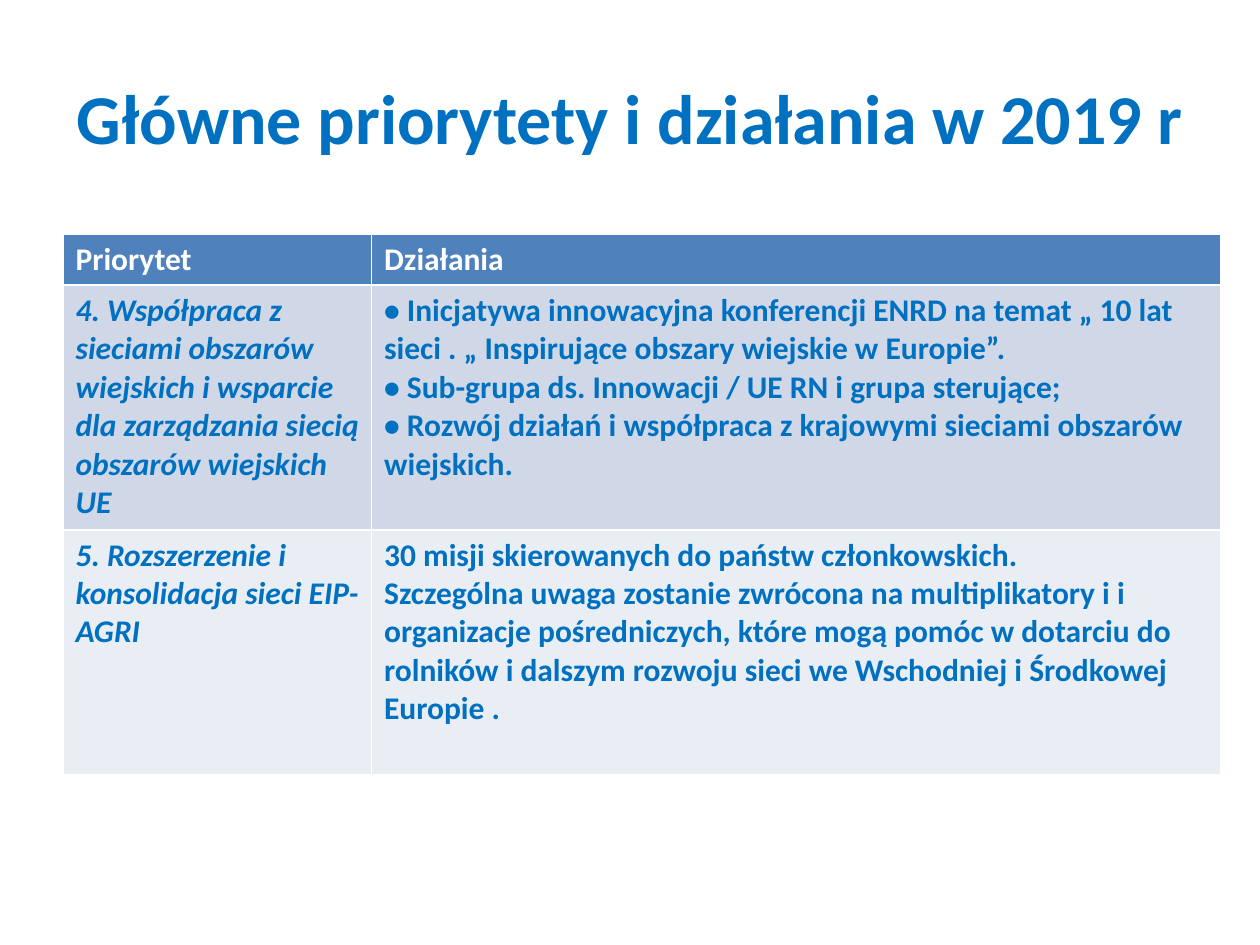
"""Build the slide with the main priorities and actions for 2019."""
from dataclasses import dataclass

import pptx
import pptx.dml.color
import pptx.enum.text
import pptx.util
from pptx.util import Cm

FONT = "Calibri"
BLUE = "0070C0"
WHITE = "FFFFFF"


@dataclass
class TableRow:
    priority: str
    actions: list[str]
    height: float
    fill: str
    color: str = BLUE
    italic_priority: bool = True


ROWS = [
    TableRow("Priorytet", ["Działania"], 1.02, "4F81BD", WHITE, False),
    TableRow(
        "4. Współpraca z sieciami obszarów wiejskich i wsparcie dla zarządzania siecią obszarów wiejskich UE",
        [
            "• Inicjatywa innowacyjna konferencji ENRD na temat „ 10 lat sieci . „ Inspirujące obszary wiejskie w Europie”.",
            "• Sub-grupa ds. Innowacji / UE RN i grupa sterujące;",
            "• Rozwój działań i współpraca z krajowymi sieciami obszarów wiejskich.",
        ],
        4.93,
        "D0D8E8",
    ),
    TableRow(
        "5. Rozszerzenie i konsolidacja sieci EIP-AGRI",
        [
            "30 misji skierowanych do państw członkowskich.",
            "Szczególna uwaga zostanie zwrócona na multiplikatory i i organizacje pośredniczych, które mogą pomóc "
            "w dotarciu do rolników i dalszym rozwoju sieci we Wschodniej i Środkowej Europie .",
        ],
        4.93,
        "E9EDF4",
    ),
]
COLUMN_WIDTHS = [6.22, 17.12]


def rgb(color: str) -> pptx.dml.color.RGBColor:
    return pptx.dml.color.RGBColor.from_string(color)


def format_text(text_frame, size: float, color: str, italic: bool = False) -> None:
    for paragraph in text_frame.paragraphs:
        for run in paragraph.runs:
            run.font.name = FONT
            run.font.size = pptx.util.Pt(size)
            run.font.bold = True
            run.font.italic = italic
            run.font.color.rgb = rgb(color)


def add_title(slide, text: str) -> None:
    title = slide.shapes.title
    title.left, title.top, title.width, title.height = Cm(1.27), Cm(0.76), Cm(22.86), Cm(3.18)
    title.text_frame.text = text
    title.text_frame.vertical_anchor = pptx.enum.text.MSO_ANCHOR.MIDDLE
    title.text_frame.paragraphs[0].alignment = pptx.enum.text.PP_ALIGN.CENTER
    format_text(title.text_frame, 40, BLUE)


def fill_cell(cell, text: str, row: TableRow, italic: bool) -> None:
    cell.fill.solid()
    cell.fill.fore_color.rgb = rgb(row.fill)
    cell.text_frame.text = text
    format_text(cell.text_frame, 18, row.color, italic)


def add_priority_table(slide, rows: list[TableRow]) -> None:
    width = sum(COLUMN_WIDTHS)
    height = sum(row.height for row in rows)
    table = slide.shapes.add_table(
        len(rows), len(COLUMN_WIDTHS), Cm(1.27), Cm(4.72), Cm(width), Cm(height)
    ).table
    for column, column_width in zip(table.columns, COLUMN_WIDTHS):
        column.width = Cm(column_width)
    for index, row in enumerate(rows):
        table.rows[index].height = Cm(row.height)
        fill_cell(table.cell(index, 0), row.priority, row, row.italic_priority)
        fill_cell(table.cell(index, 1), "\n".join(row.actions), row, False)


def main() -> None:
    presentation = pptx.Presentation()
    presentation.slide_width, presentation.slide_height = Cm(25.4), Cm(19.05)
    slide = presentation.slides.add_slide(presentation.slide_layouts.get_by_name("Title Only"))
    add_title(slide, "Główne priorytety i działania w 2019 r")
    add_priority_table(slide, ROWS)
    presentation.save("out.pptx")


if __name__ == "__main__":
    main()
